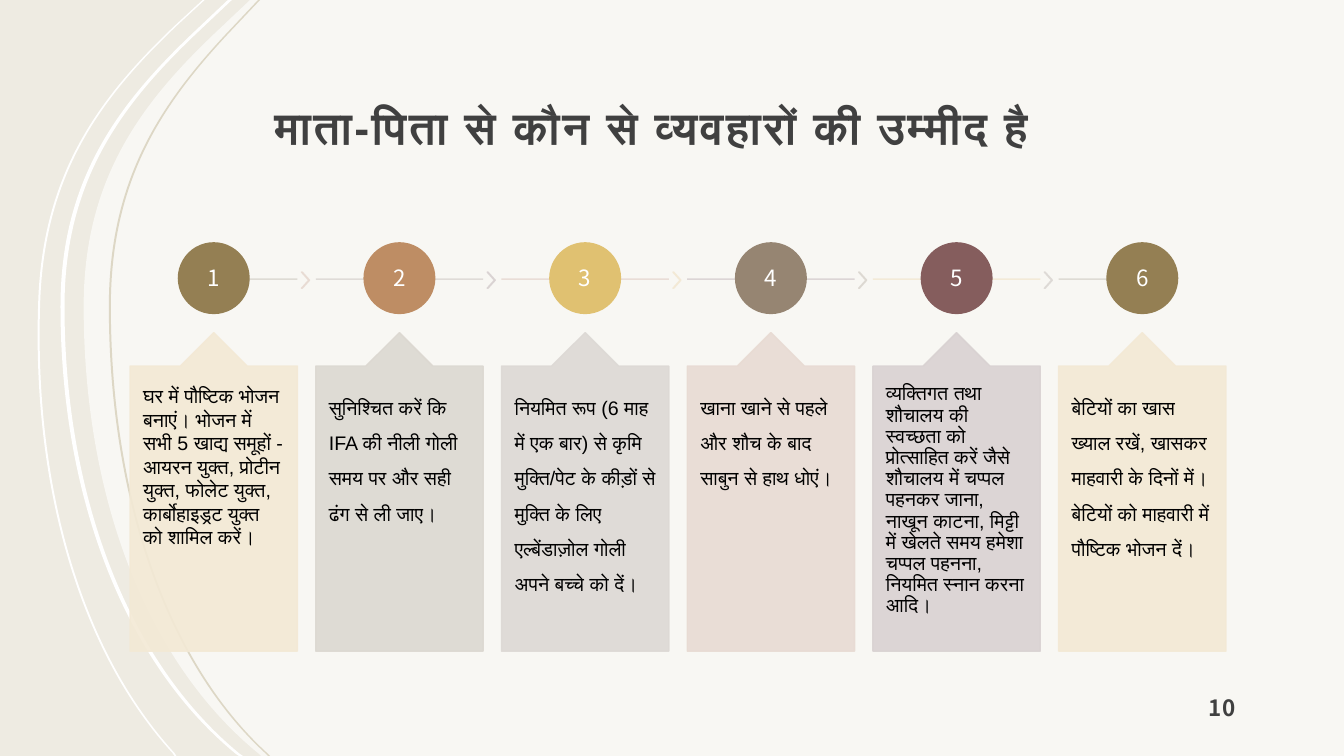
from lxml import etree
from pptx import Presentation
from pptx.dml.color import RGBColor
from pptx.enum.shapes import MSO_CONNECTOR, MSO_SHAPE
from pptx.enum.text import MSO_ANCHOR, PP_ALIGN
from pptx.oxml.ns import qn
from pptx.util import Inches, Pt

STRAIGHT = MSO_CONNECTOR.STRAIGHT
CIRCLE, CHEVRON = MSO_SHAPE.OVAL, MSO_SHAPE.CHEVRON
CALLOUT = MSO_SHAPE.UP_ARROW_CALLOUT
TOP, MIDDLE, BOTTOM = MSO_ANCHOR.TOP, MSO_ANCHOR.MIDDLE, MSO_ANCHOR.BOTTOM
LEFT, CENTER = PP_ALIGN.LEFT, PP_ALIGN.CENTER

WIDTH, HEIGHT = 13.33, 7.5
INK, WHITE, BLACK = "404040", "FFFFFF", "000000"
SAND, STONE, ASH, ROSE, MAUVE = "F3E9D5", "DCD8D1", "DDD9D5", "E8DBD3", "D9D2D2"

# Edge curves from top to bottom: end point, two Bezier segments, end point
EDGE_Y = [0, 0.35, 1.04, 1.79, 3.04, 4.92, 6.57, 7.48, 7.5]
OUTER_Y = [0, 0.24, 0.93, 1.68, 2.97, 4.8, 6.45, 7.47, 7.5]
PANEL_X = [2.48, 2.11, 1.39, 0.83, 0.83, 0.83, 1.45, 2.57, 2.59]
RIBBONS = [  # left edge, heights, thickness, colour
    ([2.01, 1.75, 1.02, 0.43, 0.38, 0.31, 0.78, 1.71, 1.73], OUTER_Y, 0.02, WHITE),
    ([2.26, 1.89, 1.17, 0.6, 0.6, 0.6, 1.23, 2.34, 2.37], EDGE_Y, 0.04, WHITE),
    ([2.56, 2.23, 1.59, 1.08, 1.08, 1.08, 1.64, 2.64, 2.66], EDGE_Y, 0.02, "DDD7C5"),
]

# Circle, card, line and chevron colours, line spacing, text
STEPS = [
    ("947F53", SAND, STONE, ROSE, 1.0,
     "घर में पौष्टिक भोजन बनाएं। भोजन में सभी 5 खाद्य समूहों - आयरन युक्त, "
     "प्रोटीन युक्त, फोलेट युक्त, कार्बोहाइड्रट युक्त\nको शामिल करें।"),
    ("BE8D64", STONE, ASH, MAUVE, 1.5,
     "सुनिश्चित करें कि IFA की नीली गोली समय पर और सही ढंग से ली जाए।"),
    ("E0C171", ASH, ROSE, SAND, 1.5,
     "नियमित रूप (6 माह में एक बार) से कृमि मुक्ति/पेट के कीड़ों से मुक्ति के लिए "
     "एल्बेंडाज़ोल गोली अपने बच्चे को दें।"),
    ("968572", ROSE, MAUVE, STONE, 1.5,
     "खाना खाने से पहले और शौच के बाद साबुन से हाथ धोएं।"),
    ("855D5D", MAUVE, SAND, ASH, 0.9,
     "व्यक्तिगत तथा शौचालय की स्वच्छता को प्रोत्साहित करें जैसे शौचालय में चप्पल "
     "पहनकर जाना, नाखून काटना, मिट्टी में खेलते समय हमेशा चप्पल पहनना, "
     "नियमित स्नान करना आदि।"),
    ("947F53", SAND, STONE, None, 1.5,
     "बेटियों का खास ख्याल रखें, खासकर माहवारी के दिनों में। "
     "बेटियों को माहवारी में पौष्टिक भोजन दें।"),
]


def rgb(color):
    return RGBColor.from_string(color)


def set_color(fill, color, alpha=100):
    fill.solid()
    fill.fore_color.rgb = rgb(color)
    if alpha < 100:
        clr = fill._xPr.find(qn("a:solidFill"))[0]
        etree.SubElement(clr, qn("a:alpha"), val=str(alpha * 1000))


def edge(points):
    """Segments along an edge: line, curve, curve, line."""
    return [points[:1], points[1:2], points[2:5], points[5:8], points[8:]]


class Deck:
    latin = "Noto Sans CJK JP"
    hindi = "Arial"

    def __init__(self, prs, background):
        self.s = prs.slides.add_slide(prs.slide_layouts[6])
        set_color(self.s.background.fill, background)

    def outline(self, segments, color, alpha=100):
        """Draw segments of one point (line) or three points (Bezier curve)."""
        ends = [(Inches(seg[-1][0]), Inches(seg[-1][1])) for seg in segments]
        fb = self.s.shapes.build_freeform(*ends[0], scale=1.0)
        fb.add_line_segments(ends[1:], close=True)
        sp = fb.convert_to_shape()
        # Turn the sides with control points into curves
        sides = list(sp._element.iter(qn("a:lnTo")))
        for side, seg in zip(sides, segments[1:]):
            if len(seg) == 3:
                side.tag = qn("a:cubicBezTo")
                for i, (x, y) in enumerate(seg[:2]):
                    pt = etree.Element(qn("a:pt"), x=str(Inches(x) - sp.left),
                                       y=str(Inches(y) - sp.top))
                    side.insert(i, pt)
        sp.shadow.inherit = False
        set_color(sp.fill, color, alpha)
        sp.line.fill.background()

    def shape(self, kind, x, y, w, h, color, alpha=100, adj=()):
        sp = self.s.shapes.add_shape(kind, Inches(x), Inches(y), Inches(w), Inches(h))
        sp.shadow.inherit = False
        for i, value in enumerate(adj):
            sp.adjustments[i] = value
        set_color(sp.fill, color, alpha)
        set_color(sp.line.fill, color, alpha)
        sp.line.width = Pt(1)

    def line(self, x1, x2, y, color, alpha=100):
        c = self.s.shapes.add_connector(STRAIGHT, Inches(x1), Inches(y), Inches(x2), Inches(y))
        set_color(c.line.fill, color, alpha)
        c.line.width = Pt(1)
        etree.SubElement(c._element.spPr, qn("a:effectLst"))

    def text(self, text, x, y, w, h, size=14, font=None, color=BLACK, bold=False,
             align=LEFT, anchor=TOP, spacing=1.0, tracking=0, insets=(0, 0, 0, 0)):
        tf = self.s.shapes.add_textbox(Inches(x), Inches(y), Inches(w), Inches(h)).text_frame
        tf.word_wrap = True
        tf.vertical_anchor = anchor
        tf.margin_left, tf.margin_top, tf.margin_right, tf.margin_bottom = map(Inches, insets)
        p = tf.paragraphs[0]
        p.alignment, p.line_spacing = align, spacing
        for i, part in enumerate(text.split("\n")):
            if i:
                p.add_line_break()
            r = p.add_run()
            r.text = part
            r.font.size, r.font.bold = Pt(size), bold
            r.font.name = font or self.latin
            r.font.color.rgb = rgb(color)
            rPr = r.font._element
            etree.SubElement(rPr, qn("a:cs"), typeface=r.font.name)
            rPr.set("kern", "1200")
            if tracking:
                rPr.set("spc", str(int(tracking * 100)))

    def step(self, number, x, circle, card, line, chevron, spacing, text):
        w, mid = 1.66, x + 0.83
        # Timeline: starts at the first circle and stops at the last
        self.line(mid + 0.09 if number == 1 else x, x + w if chevron else mid, 2.77, line, 90)
        if chevron:
            self.shape(CHEVRON, x + 1.7, 2.7, 0.08, 0.16, chevron, 90, [0.9])
        self.shape(CIRCLE, mid - 0.35, 2.41, 0.7, 0.7, circle)
        self.text(str(number), mid - 0.25, 2.52, 0.5, 0.5, size=16, color=WHITE,
                  align=CENTER, anchor=MIDDLE, spacing=0.9, insets=[0.03] * 4)
        # Card
        self.shape(CALLOUT, x, 3.3, w, 3.16, card, 90, [0.5, 0.2, 0.2, 1])
        self.text(text, x, 3.63, w, 2.83, font=self.hindi, spacing=spacing,
                  insets=(0.13, 0.18, 0.13, 0.18))


def main():
    prs = Presentation()
    prs.slide_width, prs.slide_height = Inches(WIDTH), Inches(HEIGHT)
    deck = Deck(prs, "EEEBE2")

    # Curved backdrop
    panel = edge(list(zip(PANEL_X, EDGE_Y)))
    deck.outline([[(WIDTH, 0)]] + panel + [[(WIDTH, HEIGHT)]], WHITE, 60)
    for xs, ys, thickness, color in RIBBONS:
        left = list(zip(xs, ys))
        right = [(x + thickness, y) for x, y in reversed(left)]
        deck.outline(edge(left) + edge(right), color)

    # Title and page number
    insets = (0.12, 0.12, 0.12, 0.1)
    deck.text("माता-पिता से कौन से व्यवहारों की उम्मीद है", 2.6, 0.48, 9.18, 1.14, size=32,
              font=deck.hindi, color=INK, bold=True, anchor=BOTTOM, spacing=1.3,
              tracking=1.5, insets=insets)
    deck.text("10", 11.87, 6.75, 1.3, 0.5, size=16, color=INK, bold=True, anchor=BOTTOM,
              insets=insets)

    # Six steps at equal distance
    pitch = (10.5 - 1.29) / (len(STEPS) - 1)
    for i, step in enumerate(STEPS):
        deck.step(i + 1, 1.29 + i * pitch, *step)

    prs.save("out.pptx")


if __name__ == "__main__":
    main()
